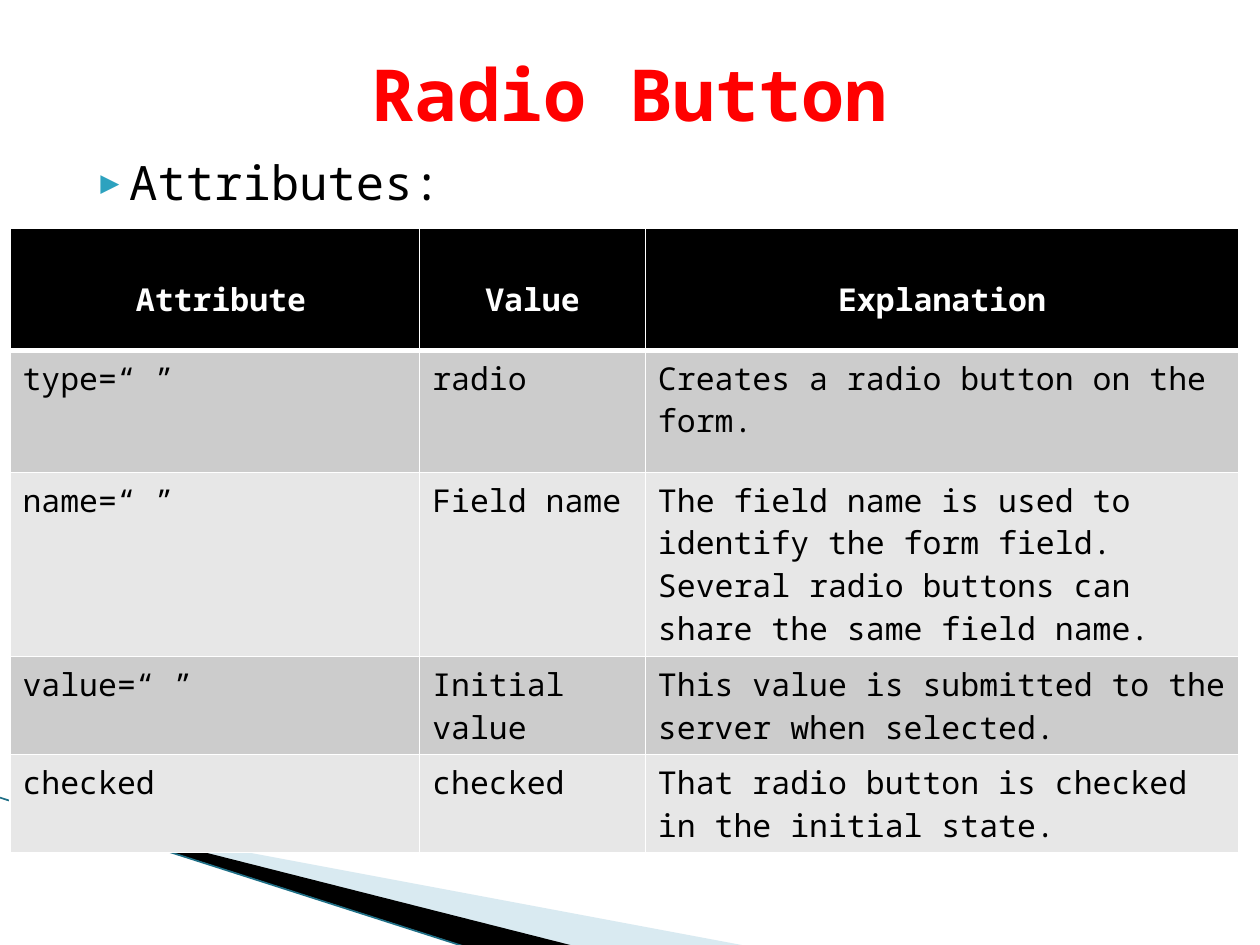
from dataclasses import dataclass

from lxml import etree
from pptx import Presentation
from pptx import util as u
from pptx.dml.color import RGBColor
from pptx.enum import shapes, text
from pptx.oxml import parse_xml
from pptx.oxml.ns import nsdecls, qn

FONT = "Noto Sans Mono"
BLACK, WHITE = "000000", "FFFFFF"
BANDS = ("CCCCCC", "E7E7E7")


@dataclass
class Swoosh:
    points: list[tuple[float, float]]
    color: str
    opacity: int = 100


@dataclass
class Column:
    heading: str
    width: float
    heading_format: dict


SWOOSHES = [
    Swoosh([(1.4, 16.51), (15.11, 19.08), (11.58, 19.08)], "A0CBDC", 40),
    Swoosh([(1.35, 16.48), (11.61, 19.08), (9.45, 19.1), (1.37, 16.51)], BLACK),
]
COLUMNS = [
    Column("Attribute", 8.26, {"margin_left": u.Cm(2.54)}),
    Column("Value", 4.55, {}),
    Column("Explanation", 11.96, {}),
]
ROW_HEIGHTS = [2.46, 2.46, 3.71, 1.98, 1.98]
ROWS = [
    ("type=“ ”", "radio", "Creates a radio button on the form."),
    ("name=“ ”", "Field name",
     "The field name is used to identify the form field. "
     "Several radio buttons can share the same field name."),
    ("value=“ ”", "Initial value",
     "This value is submitted to the server when selected."),
    ("checked", "checked", "That radio button is checked in the initial state."),
]


def rgb(color: str) -> RGBColor:
    return RGBColor.from_string(color)


def apply_format(target, values: dict) -> None:
    for name, value in values.items():
        setattr(target, name, value)


def write(paragraph, words: str, size: float, color: str, bold: bool = False) -> None:
    run = paragraph.add_run()
    run.text = words
    apply_format(run.font, {"name": FONT, "size": u.Pt(size), "bold": bold})
    run.font.color.rgb = rgb(color)


def place(shape, left: float, top: float, width: float, height: float) -> None:
    apply_format(shape, {"left": u.Cm(left), "top": u.Cm(top),
                         "width": u.Cm(width), "height": u.Cm(height)})


def draw_swoosh(slide, swoosh: Swoosh) -> None:
    start, *others = [(u.Cm(x), u.Cm(y)) for x, y in swoosh.points]
    builder = slide.shapes.build_freeform(*start)
    builder.add_line_segments(others)
    shape = builder.convert_to_shape()
    shape.shadow.inherit = False
    shape.line.fill.background()
    shape.fill.solid()
    shape.fill.fore_color.rgb = rgb(swoosh.color)
    if swoosh.opacity < 100:
        color = next(shape.element.spPr.iter(qn("a:srgbClr")))
        etree.SubElement(color, qn("a:alpha"), val=str(swoosh.opacity * 1000))


def draw_edge_line(slide) -> None:
    line = slide.shapes.add_connector(
        shapes.MSO_CONNECTOR.STRAIGHT, u.Cm(0), u.Cm(16.08), u.Cm(9.42), u.Cm(19.1))
    line.line.color.rgb = rgb("1F6F86")
    line.line.width = u.Pt(0.95)
    etree.SubElement(line.element.spPr, qn("a:effectLst"))


def draw_title(slide) -> None:
    title = slide.shapes.title
    place(title, 1.27, 0.76, 22.86, 2.21)
    title.text_frame.vertical_anchor = text.MSO_ANCHOR.MIDDLE
    paragraph = title.text_frame.paragraphs[0]
    paragraph.alignment = text.PP_ALIGN.CENTER
    write(paragraph, "Radio Button", 41, "FF0000", True)


def draw_bullet(slide) -> None:
    box = slide.shapes.add_textbox(u.Cm(1.27), u.Cm(2.97), u.Cm(22.86), u.Cm(13.72))
    box.text_frame.word_wrap = True
    paragraph = box.text_frame.paragraphs[0]
    properties = paragraph._p.get_or_add_pPr()
    properties.set("marL", str(u.Cm(1.02)))
    properties.set("indent", str(u.Cm(-0.71)))
    for bullet in ('<a:buClr {}><a:srgbClr val="2DA2BF"/></a:buClr>',
                   '<a:buSzPct {} val="68000"/>',
                   '<a:buFont {} typeface="Noto Sans Mono"/>',
                   '<a:buChar {} char="▶"/>'):
        properties.append(parse_xml(bullet.format(nsdecls("a"))))
    write(paragraph, "Attributes:", 27, BLACK)


def set_borders(cell, bottom_width: float) -> None:
    properties = cell._tc.get_or_add_tcPr()
    widths = {"lnL": 1, "lnR": 1, "lnT": 1, "lnB": bottom_width}
    for position, (side, width) in enumerate(widths.items()):
        border = parse_xml(
            f'<a:{side} {nsdecls("a")} w="{u.Pt(width)}"><a:solidFill>'
            f'<a:srgbClr val="{WHITE}"/></a:solidFill></a:{side}>')
        properties.insert(position, border)


def fill_cell(cell, words: str, fill: str, color: str, heading: bool = False) -> None:
    cell.fill.solid()
    cell.fill.fore_color.rgb = rgb(fill)
    set_borders(cell, 3 if heading else 1)
    write(cell.text_frame.paragraphs[0], words, 18, color, heading)


def draw_table(slide) -> None:
    frame = slide.shapes.add_table(
        len(ROW_HEIGHTS), len(COLUMNS), u.Cm(0.2), u.Cm(4.6),
        u.Cm(sum(column.width for column in COLUMNS)), u.Cm(sum(ROW_HEIGHTS)))
    table = frame.table
    for row, height in zip(table.rows, ROW_HEIGHTS):
        row.height = u.Cm(height)
    for index, column in enumerate(COLUMNS):
        table.columns[index].width = u.Cm(column.width)
        cell = table.cell(0, index)
        fill_cell(cell, column.heading, BLACK, WHITE, True)
        apply_format(cell, {"margin_top": u.Cm(1), **column.heading_format})
        if not column.heading_format:
            cell.text_frame.paragraphs[0].alignment = text.PP_ALIGN.CENTER
    for row_index, row in enumerate(ROWS):
        for index, words in enumerate(row):
            fill_cell(table.cell(row_index + 1, index), words,
                      BANDS[row_index % 2], BLACK)


def main() -> None:
    presentation = Presentation()
    presentation.slide_width, presentation.slide_height = u.Cm(25.4), u.Cm(19.05)
    slide = presentation.slides.add_slide(presentation.slide_layouts[5])
    for swoosh in SWOOSHES:
        draw_swoosh(slide, swoosh)
    draw_edge_line(slide)
    draw_bullet(slide)
    draw_title(slide)
    draw_table(slide)
    presentation.save("out.pptx")


if __name__ == "__main__":
    main()
